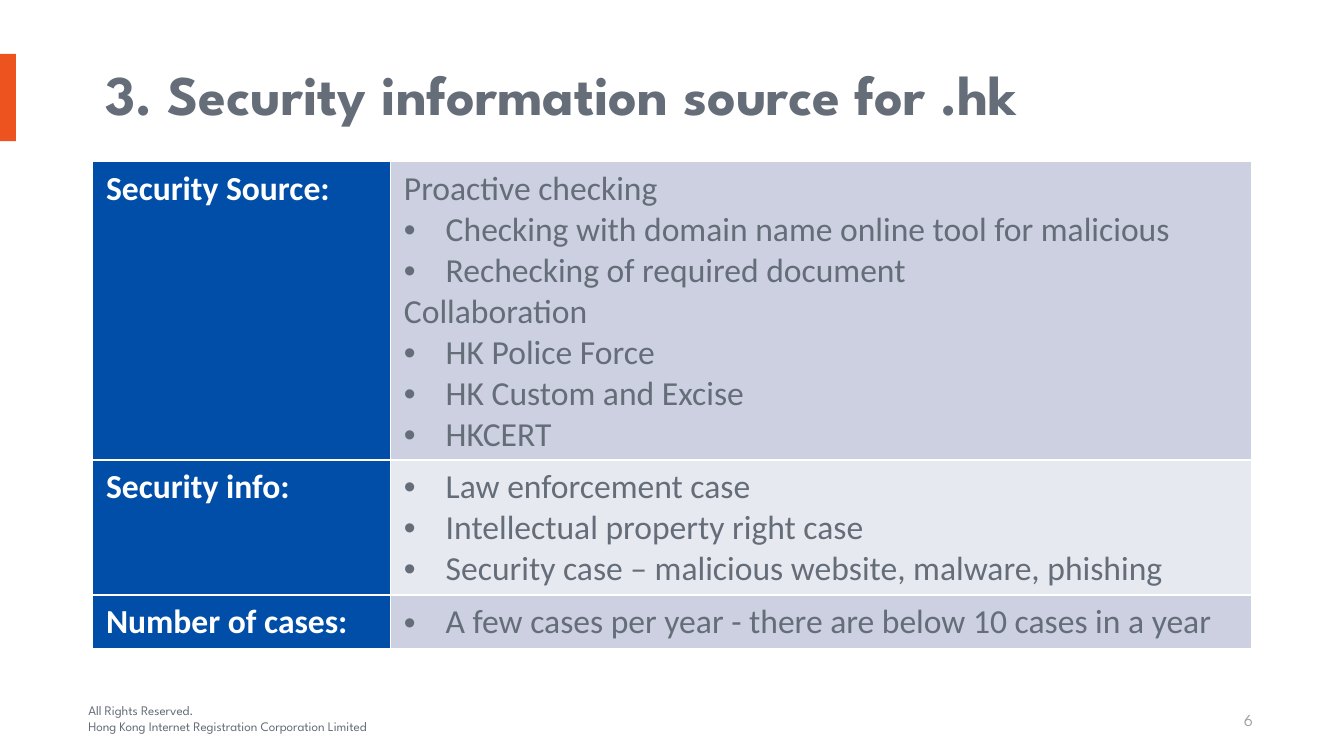
"""Build the slide on security information sources for .hk."""
from lxml import etree
from pptx import Presentation
from pptx.dml.color import RGBColor
from pptx.enum.shapes import MSO_SHAPE
from pptx.enum.text import MSO_ANCHOR, PP_ALIGN
from pptx.oxml.ns import qn
from pptx.util import Cm, Pt

RECTANGLE = MSO_SHAPE.RECTANGLE
TOP, MIDDLE = MSO_ANCHOR.TOP, MSO_ANCHOR.MIDDLE
LEFT, RIGHT = PP_ALIGN.LEFT, PP_ALIGN.RIGHT

HEADING_FONT, BODY_FONT = "League Spartan", "Calibri"
GREY, PALE_GREY, WHITE = "656D78", "9FA3A8", "FFFFFF"
ORANGE, BLUE = "ED531F", "004EA8"
BANDS = ["CCD0E1", "E7E9F1"]

TITLE = "3. Security information source for .hk"
FOOTER = "All Rights Reserved.\nHong Kong Internet Registration Corporation Limited"
PAGE_NUMBER = "6"
BULLET = "•"
ROWS = [
    ("Security Source:", [
        ("", "Proactive checking"),
        (BULLET, "Checking with domain name online tool for malicious"),
        (BULLET, "Rechecking of required document"),
        ("", "Collaboration"),
        (BULLET, "HK Police Force"),
        (BULLET, "HK Custom and Excise"),
        (BULLET, "HKCERT"),
    ]),
    ("Security info:", [
        (BULLET, "Law enforcement case"),
        (BULLET, "Intellectual property right case"),
        (BULLET, "Security case – malicious website, malware, phishing"),
    ]),
    ("Number of cases:", [
        (BULLET, "A few cases per year - there are below 10 cases in a year"),
    ]),
]

CONTENT_LEFT = 1.75
COLUMN_WIDTHS = [5.63, 16.27]
CONTENT_WIDTH = sum(COLUMN_WIDTHS)
BAR_TOP, BAR_HEIGHT = 1.02, 1.65
TABLE_TOP = 3.05
LINE_HEIGHT, CELL_PADDING = 0.77, 0.25
BULLET_INDENT = 0.79


def color(value):
    """Turn a hex string into a colour."""
    return RGBColor.from_string(value)


def format_runs(text_frame, size, font_name, font_color, bold=False):
    """Apply one font to every run."""
    for paragraph in text_frame.paragraphs:
        for run in paragraph.runs:
            run.font.size = Pt(size)
            run.font.name = font_name
            run.font.bold = bold
            run.font.color.rgb = color(font_color)


def add_text(slide, box, text, size, font_color, bold=False,
             anchor=MIDDLE, alignment=LEFT, spacing=1.0):
    """Add a wrapped text box in the heading font."""
    text_frame = slide.shapes.add_textbox(*map(Cm, box)).text_frame
    text_frame.word_wrap = True
    text_frame.vertical_anchor = anchor
    text_frame.text = text
    for paragraph in text_frame.paragraphs:
        paragraph.alignment = alignment
        paragraph.line_spacing = spacing
    format_runs(text_frame, size, HEADING_FONT, font_color, bold)


def add_bullet(paragraph):
    """Give a paragraph a hanging bullet."""
    properties = paragraph._p.get_or_add_pPr()
    properties.set("marL", str(Cm(BULLET_INDENT)))
    properties.set("indent", str(-Cm(BULLET_INDENT)))
    etree.SubElement(properties, qn("a:buFont"), typeface="Arial")
    etree.SubElement(properties, qn("a:buChar"), char=BULLET)


def style_cell(cell, fill_color):
    """Draw white borders around a cell and fill it."""
    properties = cell._tc.get_or_add_tcPr()
    for side in ("a:lnL", "a:lnR", "a:lnT", "a:lnB"):
        line = etree.SubElement(properties, qn(side), w=str(Pt(1)))
        fill = etree.SubElement(line, qn("a:solidFill"))
        etree.SubElement(fill, qn("a:srgbClr"), val=WHITE)
    cell.fill.solid()
    cell.fill.fore_color.rgb = color(fill_color)


def add_security_table(slide):
    """Add the table with row heights that follow the line counts."""
    heights = [CELL_PADDING + LINE_HEIGHT * len(lines) for _, lines in ROWS]
    table = slide.shapes.add_table(
        len(ROWS), len(COLUMN_WIDTHS), Cm(CONTENT_LEFT), Cm(TABLE_TOP),
        Cm(CONTENT_WIDTH), Cm(sum(heights))).table
    for column, width in zip(table.columns, COLUMN_WIDTHS):
        column.width = Cm(width)
    for index, (label, lines) in enumerate(ROWS):
        table.rows[index].height = Cm(heights[index])
        label_cell, detail_cell = table.cell(index, 0), table.cell(index, 1)
        label_cell.text_frame.text = label
        detail_cell.text_frame.text = "\n".join(text for _, text in lines)
        for paragraph, (bullet, _) in zip(detail_cell.text_frame.paragraphs, lines):
            if bullet:
                add_bullet(paragraph)
        style_cell(label_cell, BLUE)
        style_cell(detail_cell, BANDS[index % len(BANDS)])
        format_runs(label_cell.text_frame, 18, BODY_FONT, WHITE, bold=True)
        format_runs(detail_cell.text_frame, 18, BODY_FONT, GREY)


def main():
    """Build and save the presentation."""
    presentation = Presentation()
    presentation.slide_width, presentation.slide_height = Cm(25.4), Cm(14.29)
    slide = presentation.slides.add_slide(presentation.slide_layouts[6])
    add_text(slide, (1.42, 13.16, 6.81, 0.86), FOOTER, 7, GREY, anchor=TOP)
    bar = slide.shapes.add_shape(RECTANGLE, 0, Cm(BAR_TOP), Cm(0.3), Cm(BAR_HEIGHT))
    bar.shadow.inherit = False
    bar.fill.solid()
    bar.fill.fore_color.rgb = color(ORANGE)
    bar.line.fill.background()
    add_text(slide, (18.21, 13.23, 5.72, 0.76), PAGE_NUMBER, 9, PALE_GREY,
             alignment=RIGHT)
    add_text(slide, (CONTENT_LEFT, BAR_TOP, CONTENT_WIDTH, BAR_HEIGHT), TITLE,
             30, GREY, bold=True, spacing=0.9)
    add_security_table(slide)
    presentation.save("out.pptx")


if __name__ == "__main__":
    main()
